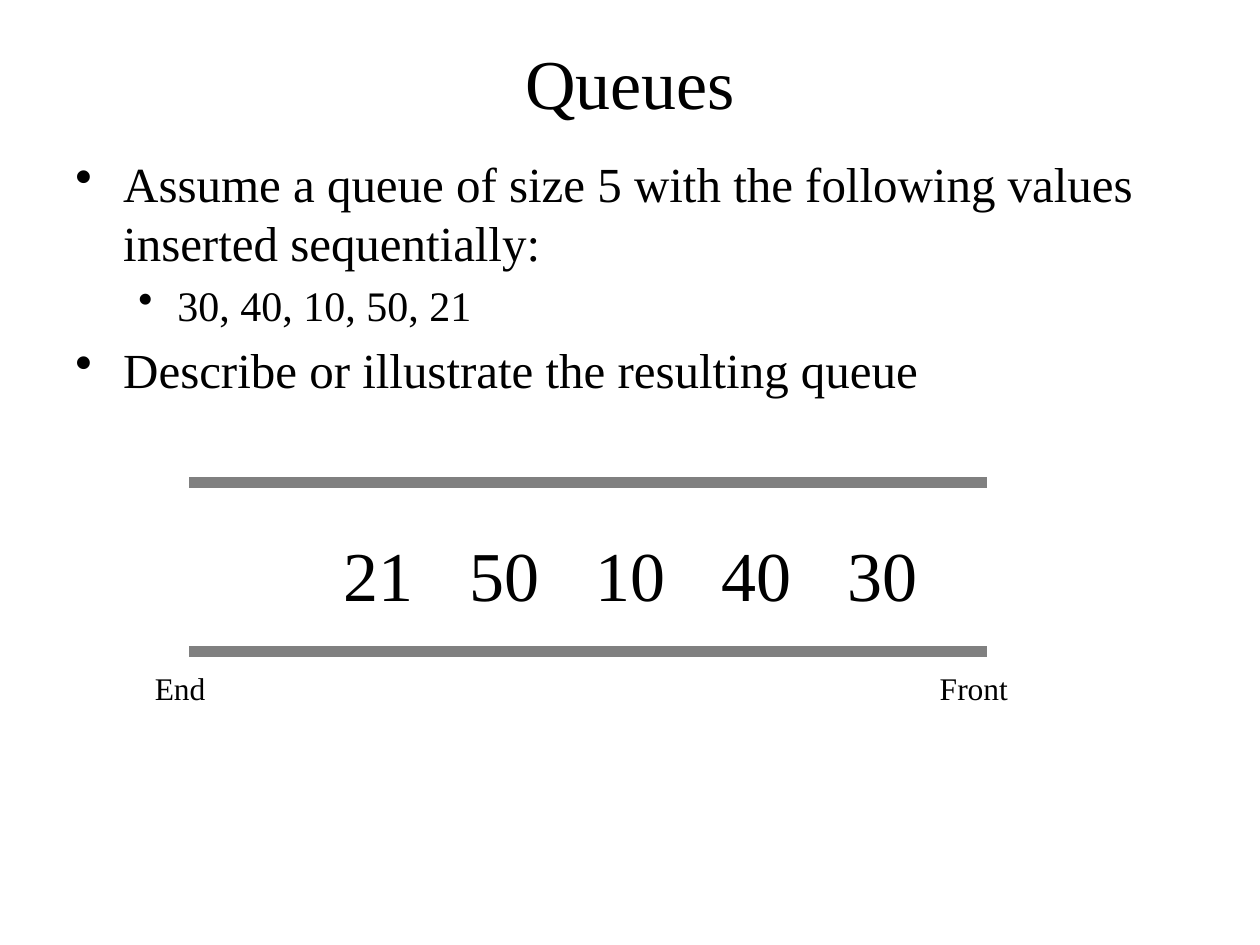
import pptx
import pptx.util
import pptx.dml.color
import pptx.enum.shapes
import pptx.enum.text
import lxml.etree

Inch = pptx.util.Inches
Pt = pptx.util.Pt
Align = pptx.enum.text.PP_ALIGN
NS = "{http://schemas.openxmlformats.org/drawingml/2006/main}"

deck = pptx.Presentation()
deck.slide_width, deck.slide_height = Inch(10), Inch(7.5)
slide = deck.slides.add_slide(deck.slide_layouts[6])


def tint(code):
    return pptx.dml.color.RGBColor.from_string(code)


def write(lines, sizes, left, top, width, height, align=Align.LEFT, wrap=True):
    box = slide.shapes.add_textbox(Inch(left), Inch(top), Inch(width), Inch(height))
    frame = box.text_frame
    frame.text = "\n".join(lines)
    frame.word_wrap = wrap
    for para, size in zip(frame.paragraphs, sizes):
        para.alignment = align
        for run in para.runs:
            run.font.name = "Times New Roman"
            run.font.size = Pt(size)
            run.font.color.rgb = tint("000000")
    return frame


# Title
title = write(["Queues"], [40], 0.5, 0.3, 9, 0.7, Align.CENTER)
title.vertical_anchor = pptx.enum.text.MSO_ANCHOR.MIDDLE

# Bulleted task, with one indented line
sizes = [28, 24, 28]
task = write([
    "Assume a queue of size 5 with the following values inserted sequentially:",
    "30, 40, 10, 50, 21",
    "Describe or illustrate the resulting queue",
], sizes, 0.5, 1.17, 9, 2.25)
indents = [(0.38, 0.38), (0.81, 0.31)]
for para, size, level in zip(task.paragraphs, sizes, [0, 1, 0]):
    para.level = level
    para.space_before = Pt(0.2 * size)
    left, hang = indents[level]
    props = para._p.get_or_add_pPr()
    props.set("marL", str(Inch(left)))
    props.set("indent", str(-Inch(hang)))
    lxml.etree.SubElement(props, NS + "buChar", char="•")

# Rails above and below the queue
start, end = 1.5, 7.83
for y in (3.83, 5.17):
    rail = slide.shapes.add_connector(
        pptx.enum.shapes.MSO_CONNECTOR.STRAIGHT,
        Inch(start), Inch(y), Inch(end), Inch(y))
    rail.line.color.rgb = tint("808080")
    rail.line.width = Pt(6)
    lxml.etree.SubElement(rail._element.spPr, NS + "effectLst")

# Labels of the two ends
for label, left, width in (("Front", 7.36, 0.75), ("End", 1.13, 0.61)):
    write([label], [18], left, 5.26, width, 0.4, wrap=False)

# Queued values, set on even tab stops
values = ["21", "50", "10", "40", "30"]
first, pitch = 0.23, 1.11
queue = write(["\t".join(values)], [40], 2.4, 4.17, end - 2.4, 0.77)
queue.margin_right = 0
props = queue.paragraphs[0]._p.get_or_add_pPr()
props.set("marL", str(Inch(first)))
props.set("indent", "0")
tabs = lxml.etree.SubElement(props, NS + "tabLst")
for step in range(1, len(values)):
    lxml.etree.SubElement(tabs, NS + "tab", pos=str(Inch(first + step * pitch)), algn="l")

deck.save("out.pptx")
